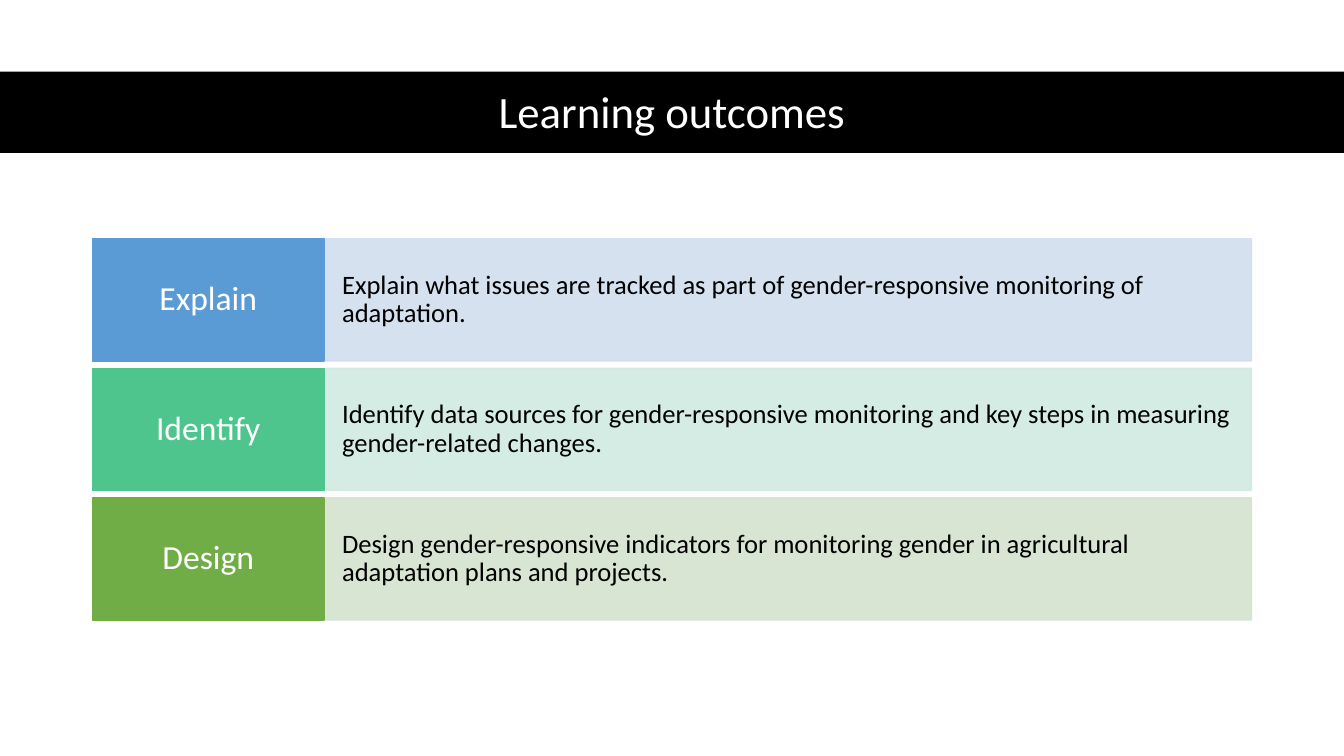
from lxml import etree
from pptx import Presentation
from pptx.dml.color import RGBColor
from pptx.enum import shapes, text
from pptx.oxml.ns import qn
from pptx.util import Pt


def add_block(left, top, width, height, color):
    block = slide.shapes.add_shape(
        shapes.MSO_SHAPE.RECTANGLE, Pt(left), Pt(top), Pt(width), Pt(height))
    block.shadow.inherit = False
    block.fill.solid()
    block.fill.fore_color.rgb = RGBColor.from_string(color)
    block.line.color.rgb = RGBColor.from_string(color)
    block.line.width = Pt(1)
    return block


def write(holder, wording, size, color, align, inset_x, inset_y):
    frame = holder.text_frame
    frame.word_wrap = True
    frame.vertical_anchor = text.MSO_ANCHOR.MIDDLE
    frame.margin_left = frame.margin_right = Pt(inset_x)
    frame.margin_top = frame.margin_bottom = Pt(inset_y)
    paragraph = frame.paragraphs[0]
    paragraph.text = wording
    paragraph.alignment = align
    paragraph.line_spacing = 0.9
    paragraph.font.name = "Calibri"
    paragraph.font.size = Pt(size)
    paragraph.font.color.rgb = RGBColor.from_string(color)


LEFT, CENTER = text.PP_ALIGN.LEFT, text.PP_ALIGN.CENTER
MARGIN, VERB_WIDTH, OUTCOME_WIDTH = 66, 165.6, 662.4
FIRST_TOP, ROW_HEIGHT, ROW_PITCH = 170.6, 87.2, 92.5

deck = Presentation()
deck.slide_width, deck.slide_height = Pt(960), Pt(540)
slide = deck.slides.add_slide(deck.slide_layouts[6])

banner = add_block(0, 51.2, 960, 58, "000000")
banner.line.fill.background()
title = slide.shapes.add_textbox(Pt(MARGIN), Pt(53.3), Pt(828), Pt(56.2))
write(title, "Learning outcomes", 32, "FFFFFF", CENTER, 7.2, 3.6)

outcomes = [
    ("Explain", "5B9BD5", "D2DEEF",
     "Explain what issues are tracked as part of gender-responsive monitoring of adaptation."),
    ("Identify", "4DC58D", "D0EAE1",
     "Identify data sources for gender-responsive monitoring and key steps in measuring gender-related changes."),
    ("Design", "70AD47", "D5E3CF",
     "Design gender-responsive indicators for monitoring gender in agricultural adaptation plans and projects."),
]

for row, (verb, verb_color, outcome_color, outcome) in enumerate(outcomes):
    top = FIRST_TOP + row * ROW_PITCH
    outcome_block = add_block(MARGIN + VERB_WIDTH, top, OUTCOME_WIDTH, ROW_HEIGHT, outcome_color)
    for tint in outcome_block._element.spPr.iter(qn("a:srgbClr")):
        etree.SubElement(tint, qn("a:alpha"), val="90000")
    write(outcome_block, outcome, 19, "000000", LEFT, 12.8, 22)
    verb_block = add_block(MARGIN, top, VERB_WIDTH, ROW_HEIGHT, verb_color)
    write(verb_block, verb, 24, "FFFFFF", CENTER, 8.8, 8.6)

deck.save("out.pptx")
